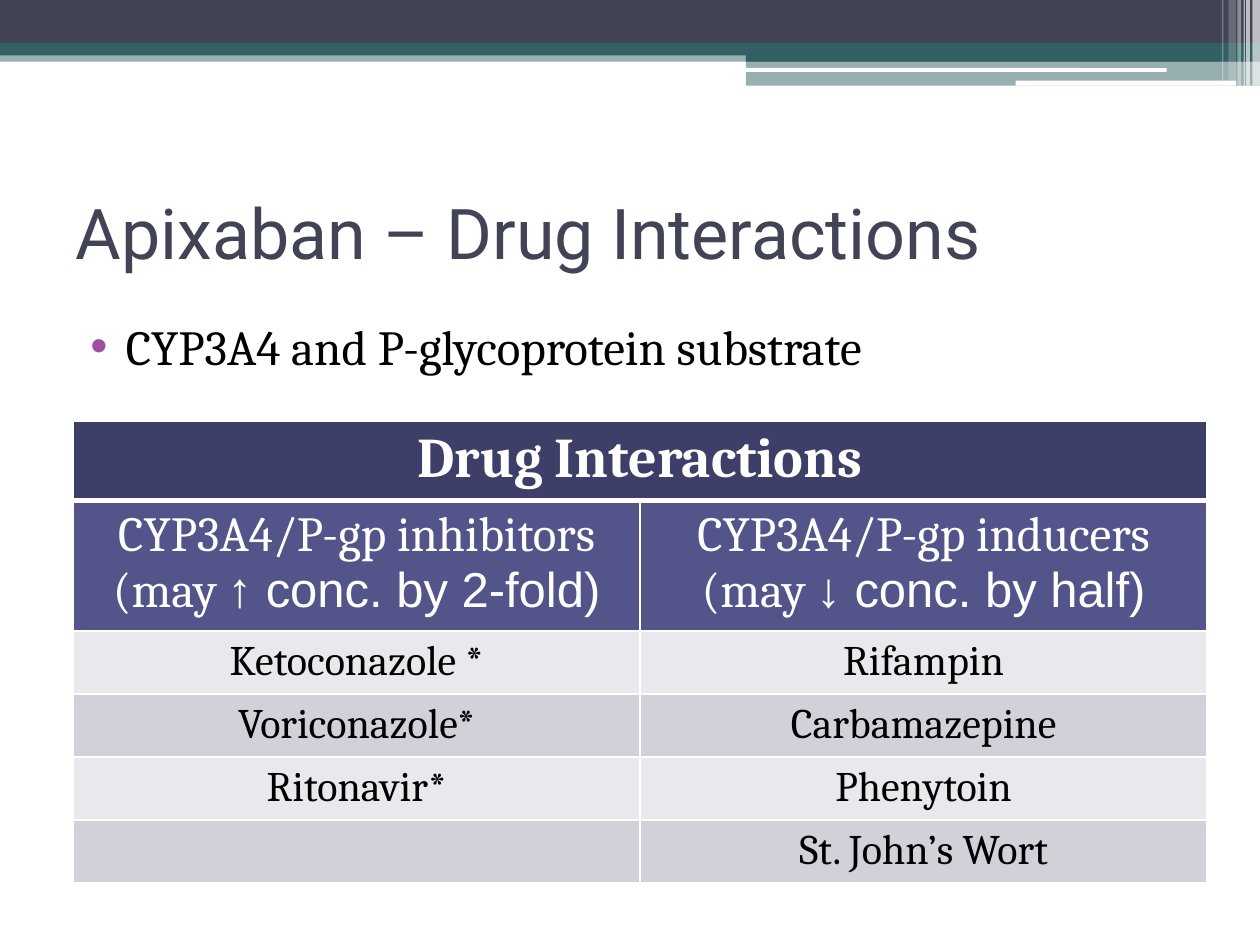
from lxml.etree import SubElement as Sub
from pptx import Presentation
from pptx.dml.color import RGBColor as RGB
from pptx.enum.shapes import MSO_SHAPE as Shape
from pptx.enum.text import MSO_ANCHOR as Anchor, MSO_AUTO_SIZE as Fit, PP_ALIGN as Align
from pptx.oxml.ns import qn
from pptx.util import Inches, Pt

HUES = {
    "ink": "424456", "teal": "326064", "white": "FFFFFF", "black": "000000",
    "dot": "A04DA3", "head": "3E3F68", "sub": "53548A",
    "pale": "E9E9ED", "grey": "D1D1DA",
}
COLS, ROWS = 100, 75


class Deck:
    def __init__(self):
        self.prs = Presentation()
        self.prs.slide_width, self.prs.slide_height = Inches(10), Inches(7.5)
        self.slide = self.prs.slides.add_slide(self.prs.slide_layouts[5])
        self.font = "Cambria"

    def box(self, x, y, w, h):
        wide, high = self.prs.slide_width / COLS, self.prs.slide_height / ROWS
        return [int(n) for n in (x * wide, y * high, w * wide, h * high)]

    def tint(self, fill, hue, alpha=100):
        fill.solid()
        fill.fore_color.rgb = RGB.from_string(HUES[hue])
        if alpha < 100:
            node = fill._xPr.find(qn("a:solidFill"))[0]
            Sub(node, qn("a:alpha"), val=str(alpha * 1000))

    def run(self, para, text, size, hue, font=None, bold=False):
        run = para.add_run()
        run.text = text
        run.font.size, run.font.bold = Pt(size), bold
        run.font.name = font or self.font
        run.font.color.rgb = RGB.from_string(HUES[hue])

    def bar(self, spot, hue, alpha=100, kind=Shape.RECTANGLE):
        bar = self.slide.shapes.add_shape(kind, *self.box(*spot))
        bar.shadow.inherit = False
        bar.line.fill.background()
        self.tint(bar.fill, hue, alpha)

    def title(self, spot, text):
        head = self.slide.shapes.title
        head.left, head.top, head.width, head.height = self.box(*spot)
        frame = head.text_frame
        frame.auto_size, frame.vertical_anchor = Fit.NONE, Anchor.MIDDLE
        para = frame.paragraphs[0]
        para.alignment = Align.LEFT
        self.run(para, text, 40, "ink", "Roboto")

    def point(self, spot, text):
        frame = self.slide.shapes.add_textbox(*self.box(*spot)).text_frame
        frame.word_wrap = True
        para = frame.paragraphs[0]
        para.space_before = Pt(3)
        props = para._p.get_or_add_pPr()
        props.set("marL", str(Inches(0.4)))
        props.set("indent", str(Inches(-0.28)))
        Sub(Sub(props, qn("a:buClr")), qn("a:srgbClr"), val=HUES["dot"])
        Sub(props, qn("a:buFont"), typeface="Arial")
        Sub(props, qn("a:buChar"), char="•")
        self.run(para, text, 28, "black")

    def edge(self, cell, base):
        props = cell._tc.get_or_add_tcPr()
        for side in "LRTB":
            wide = base if side == "B" else 1
            line = Sub(props, qn(f"a:ln{side}"), w=str(Pt(wide)))
            Sub(Sub(line, qn("a:solidFill")), qn("a:srgbClr"), val=HUES["white"])

    def cell(self, cell, lines, fill, size, hue, bold=False, base=1):
        self.edge(cell, base)
        self.tint(cell.fill, fill)
        frame = cell.text_frame
        for i, line in enumerate(lines):
            para = frame.add_paragraph() if i else frame.paragraphs[0]
            para.alignment = Align.CENTER
            for text, font in line:
                self.run(para, text, size, hue, font, bold)

    def table(self, spot, title, heads, drugs):
        x, y, w, highs = spot
        grid = self.slide.shapes.add_table(
            len(highs), 2, *self.box(x, y, w, sum(highs))).table
        for row, high in zip(grid.rows, highs):
            row.height = self.box(0, 0, 0, high)[3]
        grid.cell(0, 0).merge(grid.cell(0, 1))
        for c in range(2):
            lines = [[(title, None)]] if c == 0 else []
            self.cell(grid.cell(0, c), lines, "head", 32, "white", True, 3)
            self.cell(grid.cell(1, c), heads[c], "sub", 28, "white")
        for r, pair in enumerate(drugs):
            for c, name in enumerate(pair):
                lines = [[(name, None)]] if name else []
                self.cell(grid.cell(r + 2, c), lines, ("pale", "grey")[r % 2], 24, "black")


def main():
    deck = Deck()
    for spot, hue, alpha in [
        ((0, 4, 100, 0.9), "teal", 50),
        ((0, 0, 100, 3.4), "ink", 100),
        ((0, 3.4, 100, 1), "teal", 100),
        ((59.2, 3.9, 40.8, 1), "teal", 100),
        ((59.2, 4.8, 40.8, 2), "teal", 50),
    ]:
        deck.bar(spot, hue, alpha)
    for spot in [(59.1, 5.4, 33.5, 0.3), (80.6, 6.4, 17.5, 0.4)]:
        deck.bar(spot, "white", kind=Shape.ROUNDED_RECTANGLE)
    for x, w, h, alpha in [
        (99.4, 0.6, 6.8, 65), (98.9, 0.3, 6.8, 65), (98.7, 0.1, 6.8, 60),
        (98.2, 0.3, 6.8, 40), (97.5, 0.6, 6.4, 20), (97, 0.1, 6.4, 30),
    ]:
        deck.bar((x, 0, w, h), "white", alpha)

    deck.title((5, 12.5, 90, 11.7), "Apixaban – Drug Interactions")
    deck.point((5, 24.6, 90, 47.3), "CYP3A4 and P-glycoprotein substrate")
    heads = [
        [[(f"CYP3A4/P-gp {kind}", None)], [("(may ", None), (f"{sign} conc. by {rate})", "Arial")]]
        for kind, sign, rate in [("inhibitors", "↑", "2-fold"), ("inducers", "↓", "half")]
    ]
    drugs = [
        ("Ketoconazole *", "Rifampin"),
        ("Voriconazole*", "Carbamazepine"),
        ("Ritonavir*", "Phenytoin"),
        ("", "St. John’s Wort"),
    ]
    highs = [6, 10] + [4.84] * len(drugs)
    deck.table((5.8, 33.4, 90, highs), "Drug Interactions", heads, drugs)
    deck.prs.save("out.pptx")


if __name__ == "__main__":
    main()
